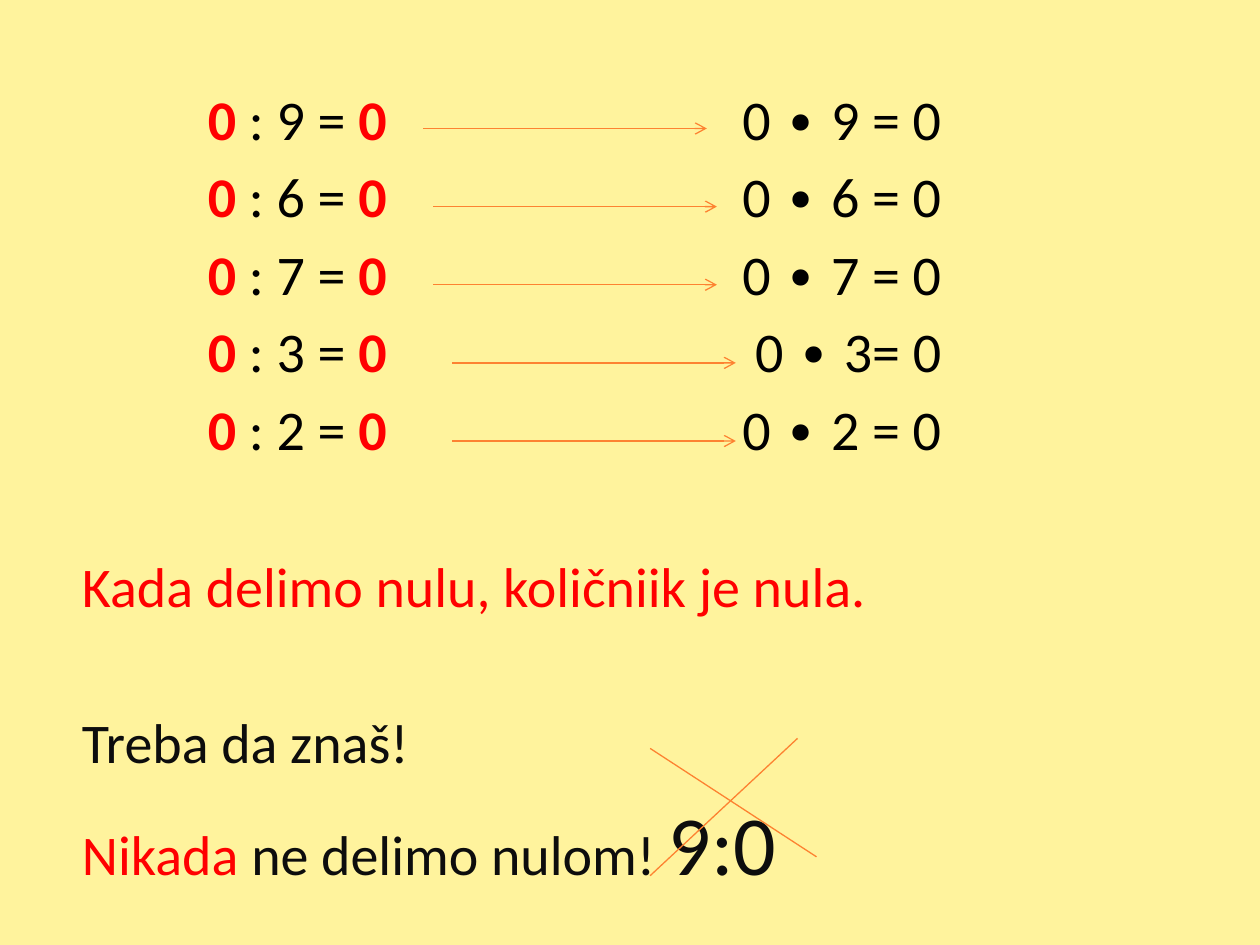
from dataclasses import dataclass

from lxml.etree import SubElement
from pptx import Presentation
from pptx.dml.color import RGBColor
from pptx.enum.shapes import MSO_CONNECTOR
from pptx.enum.text import MSO_ANCHOR, MSO_AUTO_SIZE, PP_ALIGN
from pptx.oxml.ns import qn
from pptx.util import Inches, Pt

CREAM, RED, BLACK, INK, ORANGE = "FFF39D", "FF0000", "000000", "0D0D0D", "FD8231"
BODY_TOP, DIVISION_INDENT = 0.62, 1.0
ARROW_TOP, ROW_PITCH, ARROW_LENGTH = 1.02, 0.62, 2.25
ROW_GAP, LAST_GAP, SECTION_GAP = 5.86, 9.6, 51.2


@dataclass
class Equation:
    divisor: int
    product: str
    arrow_left: float


EQUATIONS = [
    Equation(9, "0 ∙ 9 = 0", 3.36),
    Equation(6, "0 ∙ 6 = 0", 3.44),
    Equation(7, "0 ∙ 7 = 0", 3.44),
    Equation(3, "0 ∙ 3= 0", 3.59),
    Equation(2, "0 ∙ 2 = 0", 3.59),
]


@dataclass
class Piece:
    text: str
    color: str
    bold: bool = False
    size: int = 32


def rgb(color: str) -> RGBColor:
    return RGBColor.from_string(color)


def prepare_frame(shape, left: float, top: float, width: float, height: float):
    """Place a text shape and return its top-anchored, wrapping frame."""
    shape.left, shape.top = Inches(left), Inches(top)
    shape.width, shape.height = Inches(width), Inches(height)
    frame = shape.text_frame
    frame.word_wrap = True
    frame.auto_size = MSO_AUTO_SIZE.NONE
    frame.vertical_anchor = MSO_ANCHOR.TOP
    return frame


def add_line(frame, pieces: list[Piece], gap: float = ROW_GAP,
             indent: float = 0, align=PP_ALIGN.LEFT) -> None:
    """Append an unbulleted paragraph made of the given pieces."""
    first = not frame.paragraphs[0].runs
    paragraph = frame.paragraphs[0] if first else frame.add_paragraph()
    paragraph.space_before = Pt(gap)
    paragraph.alignment = align
    properties = paragraph._p.get_or_add_pPr()
    properties.set("marL", str(Inches(indent)))
    properties.set("indent", "0")
    SubElement(properties, qn("a:buNone"))
    for piece in pieces:
        run = paragraph.add_run()
        run.text = piece.text
        run.font.name = "Calibri"
        run.font.size = Pt(piece.size)
        run.font.bold = piece.bold
        run.font.color.rgb = rgb(piece.color)


def add_stroke(slide, x1: float, y1: float, x2: float, y2: float,
               arrow: bool = False) -> None:
    stroke = slide.shapes.add_connector(
        MSO_CONNECTOR.STRAIGHT, Inches(x1), Inches(y1), Inches(x2), Inches(y2))
    stroke.line.color.rgb = rgb(ORANGE)
    stroke.line.width = Pt(0.75)
    if arrow:
        SubElement(stroke.line._get_or_add_ln(), qn("a:tailEnd"), type="arrow")
    SubElement(stroke._element.spPr, qn("a:effectLst"))


def main() -> None:
    presentation = Presentation()
    presentation.slide_width, presentation.slide_height = Inches(10), Inches(7.5)
    slide = presentation.slides.add_slide(presentation.slide_layouts[1])
    slide.background.fill.solid()
    slide.background.fill.fore_color.rgb = rgb(CREAM)

    # The slide has body text only
    title = slide.shapes.title.element
    title.getparent().remove(title)
    lesson = prepare_frame(slide.placeholders[1], 0.55, BODY_TOP, 8.83, 6.25)
    products = prepare_frame(slide.shapes.add_textbox(0, 0, 0, 0),
                             5.57, BODY_TOP, 2, 3.2)

    # Divisions, each checked by a multiplication
    for row, equation in enumerate(EQUATIONS):
        add_line(lesson, [
            Piece("0", RED, True),
            Piece(f" : {equation.divisor} = ", BLACK),
            Piece("0", RED, True),
        ], indent=DIVISION_INDENT)
        add_line(products, [Piece(equation.product, BLACK)], align=PP_ALIGN.RIGHT)
        y = ARROW_TOP + row * ROW_PITCH
        add_stroke(slide, equation.arrow_left, y,
                   equation.arrow_left + ARROW_LENGTH, y, arrow=True)

    # Rules about zero
    add_line(lesson, [Piece("Kada delimo nulu, količniik je nula.", RED)], SECTION_GAP)
    add_line(lesson, [Piece("Treba da znaš!", INK)], SECTION_GAP)
    add_line(lesson, [
        Piece("Nikada", RED),
        Piece(" ne delimo nulom! ", INK),
        Piece("9:0", INK, size=48),
    ], LAST_GAP)

    # Cross over the forbidden division
    add_stroke(slide, 5.16, 5.94, 6.48, 6.8)
    add_stroke(slide, 5.16, 6.95, 6.33, 5.86)

    presentation.save("out.pptx")


if __name__ == "__main__":
    main()
